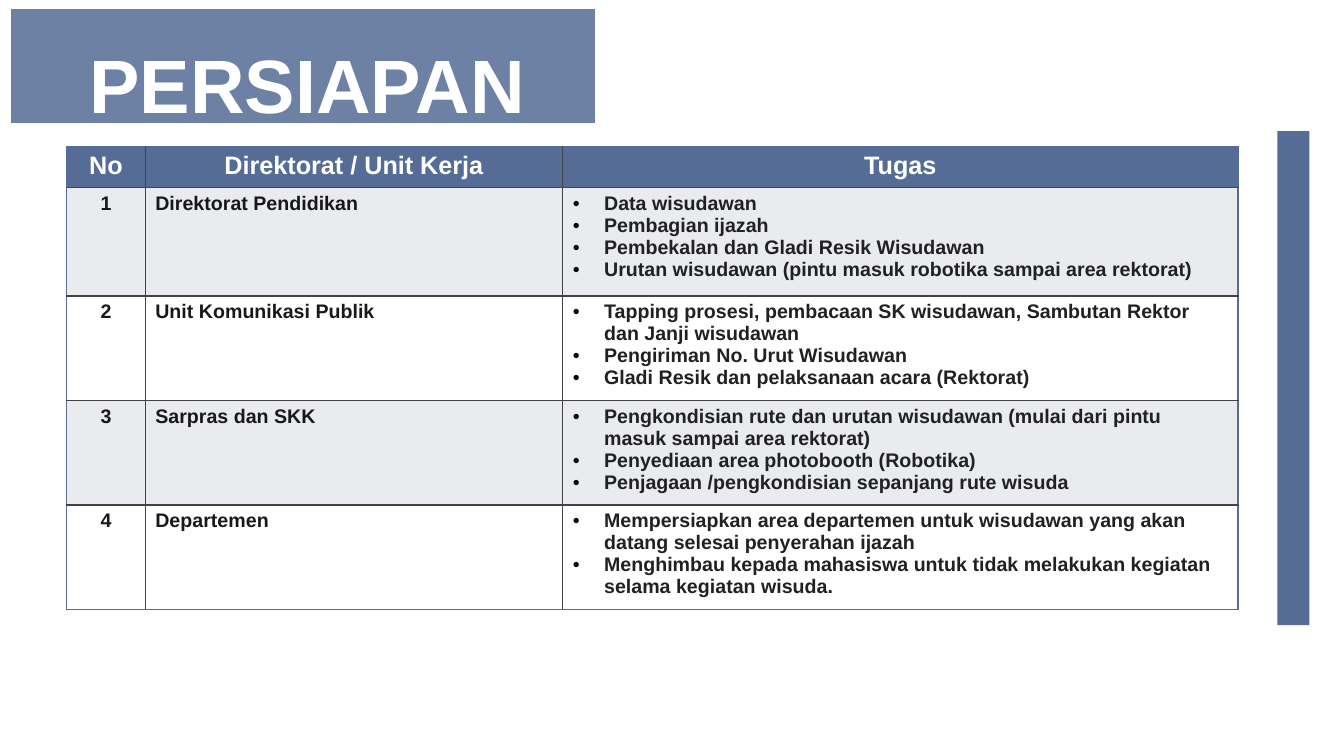
from lxml import etree
from pptx import Presentation
from pptx.dml.color import RGBColor
from pptx.enum import shapes, text
from pptx.oxml.ns import qn
from pptx.util import Cm, Pt

BLUE, GRID, BAND, WHITE = "556D96", "434343", "E9EBEF", "FFFFFF"
DARK, TASK = "181818", "212121"
COLS = (1.98, 10.52, 17.02)
ROWS = (0.94, 2.74, 2.36, 2.64, 2.64)
HEAD = ("No", "Direktorat / Unit Kerja", "Tugas")
UNITS = (
    ("Direktorat Pendidikan", (
        "Data wisudawan",
        "Pembagian ijazah",
        "Pembekalan dan Gladi Resik Wisudawan",
        "Urutan wisudawan (pintu masuk robotika sampai area rektorat)")),
    ("Unit Komunikasi Publik", (
        "Tapping prosesi, pembacaan SK wisudawan, Sambutan Rektor dan Janji wisudawan",
        "Pengiriman No. Urut Wisudawan",
        "Gladi Resik dan pelaksanaan acara (Rektorat)")),
    ("Sarpras dan SKK", (
        "Pengkondisian rute dan urutan wisudawan (mulai dari pintu masuk sampai area rektorat)",
        "Penyediaan area photobooth (Robotika)",
        "Penjagaan /pengkondisian sepanjang rute wisuda")),
    ("Departemen", (
        "Mempersiapkan area departemen untuk wisudawan yang akan datang selesai penyerahan ijazah",
        "Menghimbau kepada mahasiswa untuk tidak melakukan kegiatan selama kegiatan wisuda.")),
)


def rgb(code):
    return RGBColor.from_string(code)


def add_block(slide, box, turn, alpha=None):
    """Add a blue rectangle turned by some degrees; alpha is in percent."""
    block = slide.shapes.add_shape(
        shapes.MSO_SHAPE.RECTANGLE, *(Cm(n) for n in box))
    block.rotation = turn
    block.shadow.inherit = False
    block.fill.solid()
    block.fill.fore_color.rgb = rgb(BLUE)
    block.line.fill.background()
    if alpha:
        tint = block.element.spPr.find(".//" + qn("a:srgbClr"))
        etree.SubElement(tint, qn("a:alpha"), val=str(alpha * 1000))


def style(para, size, color, align):
    para.alignment = align
    font = para.font
    font.name, font.size, font.bold = "Arial", Pt(size), True
    font.color.rgb = rgb(color)


def add_title(slide, words, box):
    frame = slide.shapes.add_textbox(*(Cm(n) for n in box)).text_frame
    frame.word_wrap = True
    frame.vertical_anchor = text.MSO_ANCHOR.BOTTOM
    frame.margin_left = frame.margin_right = Cm(0.33)
    frame.margin_top = frame.margin_bottom = Cm(0.33)
    frame.text = words
    style(frame.paragraphs[0], 54, WHITE, text.PP_ALIGN.RIGHT)


def add_bullet(para):
    props = para._p.get_or_add_pPr()
    props.set("marL", str(Cm(0.79)))
    props.set("indent", str(-Cm(0.79)))
    tint = etree.SubElement(props, qn("a:buClr"))
    etree.SubElement(tint, qn("a:srgbClr"), val="000000")
    etree.SubElement(props, qn("a:buFont"), typeface="Arial")
    etree.SubElement(props, qn("a:buChar"), char="•")
    # The schema wants default run properties after the bullet.
    run = props.find(qn("a:defRPr"))
    if run is not None:
        props.append(run)


def set_edges(cell, row, col):
    """Draw the outer frame in blue and the inner grid in grey."""
    outer = {"L": col == 0, "R": col == len(COLS) - 1,
             "T": row == 0, "B": row == len(ROWS) - 1}
    props = cell._tc.get_or_add_tcPr()
    for side, edge in outer.items():
        line = etree.SubElement(props, qn("a:ln" + side), w=str(Pt(1)))
        fill = etree.SubElement(line, qn("a:solidFill"))
        etree.SubElement(fill, qn("a:srgbClr"), val=BLUE if edge else GRID)


def fill_cell(cell, lines, row, col):
    set_edges(cell, row, col)
    cell.fill.solid()
    shade = BLUE if row == 0 else BAND if row % 2 else WHITE
    cell.fill.fore_color.rgb = rgb(shade)
    cell.text = "\n".join(lines)
    mid = row == 0 or col == 0
    align = text.PP_ALIGN.CENTER if mid else text.PP_ALIGN.LEFT
    color = WHITE if row == 0 else TASK if col == 2 else DARK
    for para in cell.text_frame.paragraphs:
        style(para, 14 if row else 18, color, align)
        if row and col == 2:
            add_bullet(para)


def add_duties(slide, left, top):
    table = slide.shapes.add_table(
        len(ROWS), len(COLS), Cm(left), Cm(top),
        Cm(sum(COLS)), Cm(sum(ROWS))).table
    for col, width in zip(table.columns, COLS):
        col.width = Cm(width)
    for row, height in zip(table.rows, ROWS):
        row.height = Cm(height)
    grid = [[[name] for name in HEAD]]
    grid += [[[str(n)], [unit], tasks]
             for n, (unit, tasks) in enumerate(UNITS, 1)]
    for r, row in enumerate(grid):
        for c, lines in enumerate(row):
            fill_cell(table.cell(r, c), lines, r, c)


def main():
    deck = Presentation()
    deck.slide_width, deck.slide_height = Cm(33.87), Cm(19.05)
    slide = deck.slides.add_slide(deck.slide_layouts[6])
    add_block(slide, (6.2, -5.69, 2.87, 14.71), 90, alpha=86)
    add_title(slide, "PERSIAPAN", (0, 0.69, 13.56, 2.87))
    add_block(slide, (26.37, 9.12, 12.45, 0.81), 270)
    add_duties(slide, 1.68, 3.7)
    deck.save("out.pptx")


if __name__ == "__main__":
    main()
